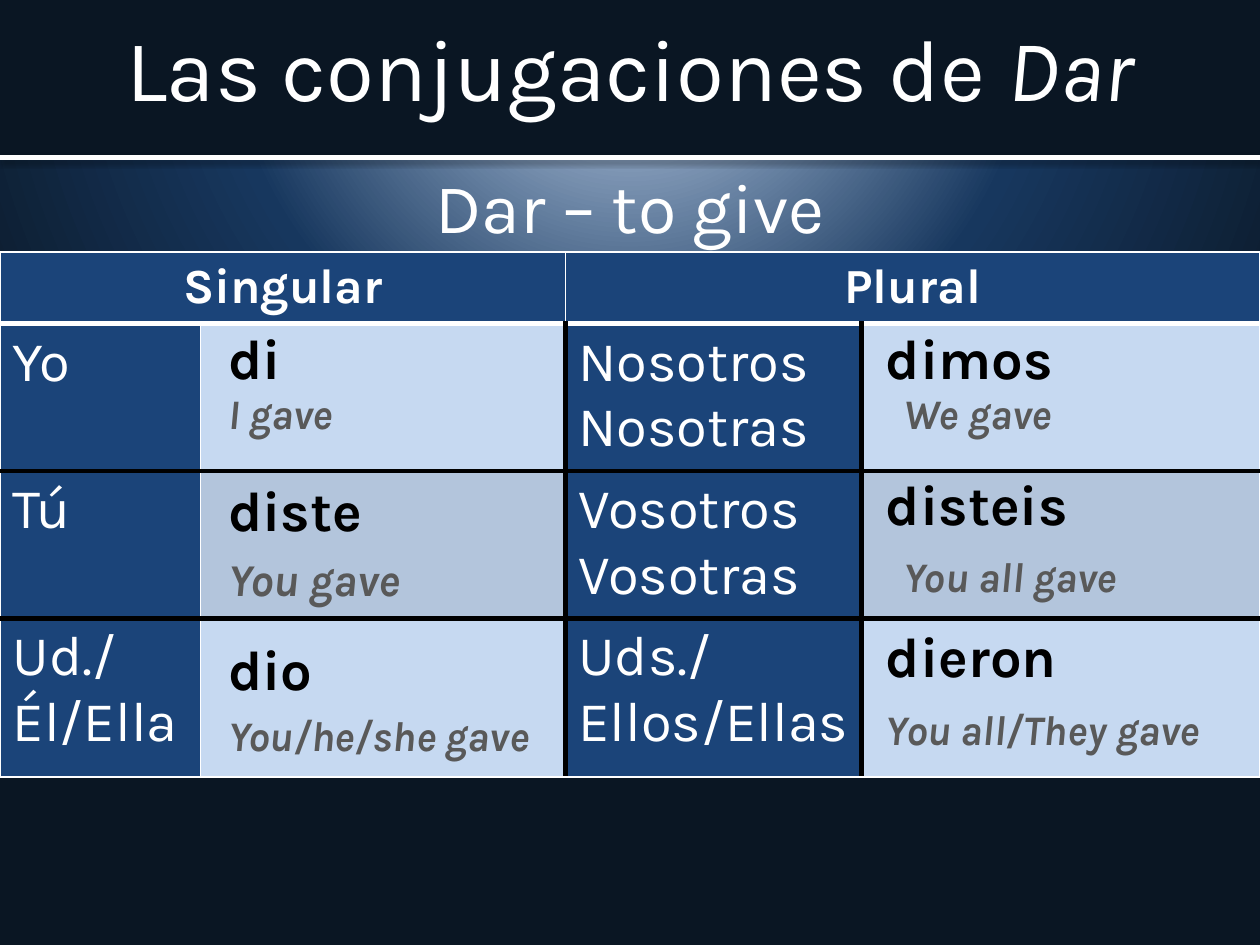
import pptx
import pptx.dml.color
import pptx.enum.shapes
import pptx.enum.text
import pptx.oxml
import pptx.oxml.ns
import pptx.util

COLORS = {
    "white": "FFFFFF", "black": "000000", "night": "0A1623", "navy": "17375E",
    "blue": "1B4479", "pale": "C6D9F1", "steel": "B3C5DC", "gray": "595959",
}
COLUMNS, ROWS = 100, 75
CENTER = pptx.enum.text.PP_ALIGN.CENTER
PLAIN_TABLE = "{2D5ABB26-0587-4C30-8999-92F81FD0307C}"
NAMESPACE = pptx.oxml.ns.nsdecls("a", "p")

COLUMN_WIDTHS = [15.9, 29, 23.5, 31.6]
ROW_HEIGHTS = [5.6, 11.7, 11.7, 12.6]
PRONOUNS = [
    ("Yo", "Nosotros\nNosotras"),
    ("Tú", "Vosotros\nVosotras"),
    ("Ud./Él/Ella", "Uds./Ellos/Ellas"),
]
VERBS = [
    ("di", 17.1, 25.5, 24.6), ("diste", 17.1, 37.6, 23.4), ("dio", 17.1, 50.2, 24.6),
    ("dimos", 69.3, 25.5, 28.2), ("disteis", 69.3, 37.1, 25.2), ("dieron", 69.3, 49.2, 24),
]
MEANINGS = [
    ("I gave", 17.1, 30.5, 24.6, 24), ("You gave", 17.1, 43.5, 26.7, 26),
    ("You/he/she gave", 17.1, 56.1, 30, 24), ("We gave", 70.7, 30.5, 24.6, 24),
    ("You all gave", 70.7, 43.5, 28.8, 24), ("You all/They gave", 69.3, 55.6, 29.3, 24),
]


class Slide:
    """Draws styled elements on the current slide, placed on a grid of columns and rows."""

    def __init__(self, deck, font="Karla"):
        self.font = font
        self.column = deck.slide_width / COLUMNS
        self.row = deck.slide_height / ROWS
        self.page = deck.slides.add_slide(deck.slide_layouts[6])

    def place(self, left, top, width, height):
        return (round(left * self.column), round(top * self.row),
                round(width * self.column), round(height * self.row))

    def color(self, name):
        return pptx.dml.color.RGBColor.from_string(COLORS[name])

    def background(self, stops):
        marks = "".join(
            f'<a:gs pos="{share * 1000}"><a:srgbClr val="{COLORS[name]}"/></a:gs>'
            for share, name in stops)
        self.page.element.cSld.insert(0, pptx.oxml.parse_xml(
            f'<p:bg {NAMESPACE}><p:bgPr><a:gradFill rotWithShape="1"><a:gsLst>{marks}</a:gsLst>'
            '<a:path path="circle"><a:fillToRect l="50000" t="-80000" r="50000" b="180000"/>'
            '</a:path></a:gradFill><a:effectLst/></p:bgPr></p:bg>'))

    def band(self, place, fill):
        shape = self.page.shapes.add_shape(
            pptx.enum.shapes.MSO_SHAPE.RECTANGLE, *self.place(*place))
        shape.shadow.inherit = False
        shape.fill.solid()
        shape.fill.fore_color.rgb = self.color(fill)
        shape.line.fill.background()

    def rule(self, top, color, points):
        left, level, width, _ = self.place(0, top, COLUMNS, 0)
        line = self.page.shapes.add_connector(
            pptx.enum.shapes.MSO_CONNECTOR.STRAIGHT, left, level, left + width, level)
        line.line.color.rgb = self.color(color)
        line.line.width = pptx.util.Pt(points)
        line._element.spPr.append(pptx.oxml.parse_xml(
            f'<a:effectLst {NAMESPACE}><a:outerShdw blurRad="39400" dist="20300" dir="5400000" '
            f'rotWithShape="0"><a:srgbClr val="{COLORS["black"]}"><a:alpha val="38000"/>'
            '</a:srgbClr></a:outerShdw></a:effectLst>'))

    def fill_text(self, frame, text, size, color, bold=False, italic=False, align=None):
        frame.text = text
        for para in frame.paragraphs:
            para.alignment = align
            for span in para.runs:
                self.style(span, size, color, bold, italic)

    def style(self, span, size, color, bold=False, italic=False):
        span.font.name = self.font
        span.font.size = pptx.util.Pt(size)
        span.font.color.rgb = self.color(color)
        span.font.bold = bold
        span.font.italic = italic

    def heading(self, place, text, size, emphasis="", middle=False):
        box = self.page.shapes.add_textbox(*self.place(*place))
        frame = box.text_frame
        frame.word_wrap = True
        if middle:
            frame.vertical_anchor = pptx.enum.text.MSO_ANCHOR.MIDDLE
        self.fill_text(frame, text, size, "white", align=CENTER)
        if emphasis:
            span = frame.paragraphs[0].add_run()
            span.text = emphasis
            self.style(span, size, "white", italic=True)

    def table(self, left, top, widths, heights):
        place = self.place(left, top, sum(widths), sum(heights))
        table = self.page.shapes.add_table(len(heights), len(widths), *place).table
        table.first_row = table.horz_banding = False
        table._tbl.tblPr.find(pptx.oxml.ns.qn("a:tableStyleId")).text = PLAIN_TABLE
        for column, width in zip(table.columns, widths):
            column.width = round(width * self.column)
        for row, height in zip(table.rows, heights):
            row.height = round(height * self.row)
        return table

    def cell(self, cell, fill, borders):
        properties = cell._tc.get_or_add_tcPr()
        for side, (color, points) in zip("LRTB", borders):
            properties.append(pptx.oxml.parse_xml(
                f'<a:ln{side} {NAMESPACE} w="{pptx.util.Pt(points)}"><a:solidFill>'
                f'<a:srgbClr val="{COLORS[color]}"/></a:solidFill></a:ln{side}>'))
        cell.fill.solid()
        cell.fill.fore_color.rgb = self.color(fill)

    def label(self, text, left, top, width, size, color, italic=False):
        table = self.table(left, top, [width], [size * 0.15 + 1.4])
        cell = table.cell(0, 0)
        cell.fill.background()
        self.fill_text(cell.text_frame, text, size, color, True, italic)

    def conjugation(self):
        table = self.table(0, 20, COLUMN_WIDTHS, ROW_HEIGHTS)
        thin, thick, heavy = ("white", 1), ("white", 3), ("black", 3)
        upright = [thin, thin, heavy, heavy, thin]
        level = [thin, thick, heavy, heavy, thin]
        for row in range(4):
            sides = upright if row else [thin] * 5
            for column in range(4):
                answer = "steel" if row == 2 else "pale"
                fill = answer if row and column % 2 else "blue"
                self.cell(table.cell(row, column), fill,
                          (sides[column], sides[column + 1], level[row], level[row + 1]))
        for column, title in ((0, "Singular"), (2, "Plural")):
            head = table.cell(0, column)
            head.merge(table.cell(0, column + 1))
            self.fill_text(head.text_frame, title, 28, "white", bold=True, align=CENTER)
        for row, pair in enumerate(PRONOUNS, 1):
            for column, pronoun in zip((0, 2), pair):
                self.fill_text(table.cell(row, column).text_frame, pronoun, 32, "white")


def main():
    deck = pptx.Presentation()
    deck.slide_width, deck.slide_height = pptx.util.Inches(10), pptx.util.Inches(7.5)
    slide = Slide(deck)
    slide.background([(0, "pale"), (52, "navy"), (100, "night")])
    slide.band((0, 0, COLUMNS, 12.5), "night")
    slide.heading((0, 12.5, COLUMNS, 52), "Dar – to give", 40)
    slide.rule(12.5, "white", 3)
    slide.heading((0, 0, COLUMNS, 10.6), "Las conjugaciones de ", 50, "Dar", middle=True)
    slide.conjugation()
    for text, left, top, width in VERBS:
        slide.label(text, left, top, width, 32, "black")
    for text, left, top, width, size in MEANINGS:
        slide.label(text, left, top, width, size, "gray", italic=True)
    deck.save("out.pptx")


if __name__ == "__main__":
    main()
